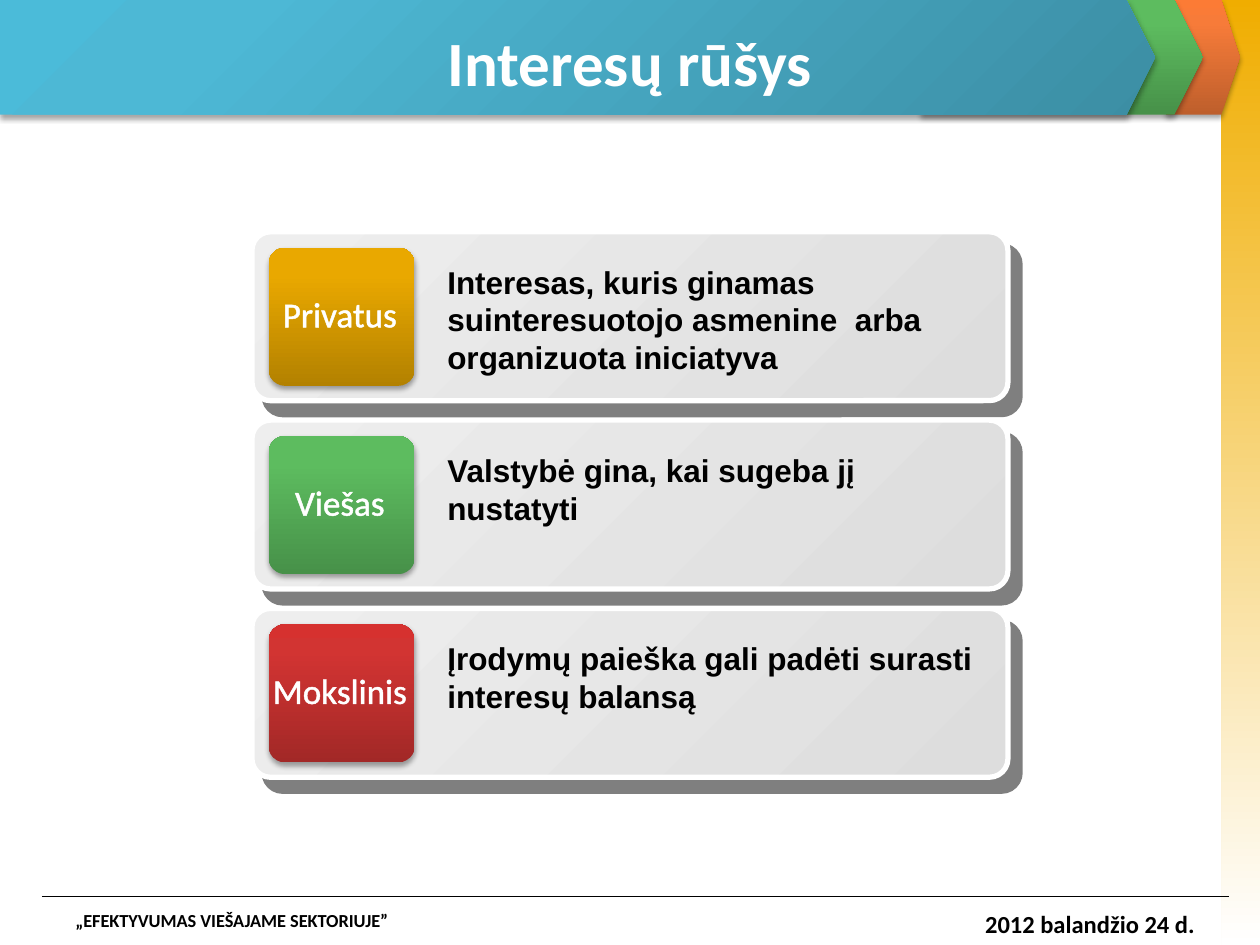
import pptx
import pptx.dml.color
import pptx.enum.shapes
import pptx.enum.text
import pptx.oxml
import pptx.oxml.ns
import pptx.util

Pt = pptx.util.Pt
SHAPES = pptx.enum.shapes.MSO_SHAPE
ALIGN = pptx.enum.text.PP_ALIGN
ANCHOR = pptx.enum.text.MSO_ANCHOR
qn = pptx.oxml.ns.qn
NAMESPACE = pptx.oxml.ns.nsdecls("a")

UPWARD = '<a:lin ang="16200000" scaled="0"/>'
DOWNWARD = '<a:lin ang="5400000" scaled="0"/>'
DIAGONAL = '<a:lin ang="2700000" scaled="0"/>'
FROM_CORNER = '<a:path path="circle"><a:fillToRect l="100000" t="100000"/></a:path>'

# Gradient stops: (percent, colour)
ORANGE = [(0, "BE5F2C"), (80, "F77B39"), (100, "FC7B35")]
GREEN = [(0, "479149"), (80, "5DBC5F"), (100, "5BBF5E")]
BLUE = [(0, "3C8EA4"), (80, "4DB8D5"), (100, "4BBBD9")]
RED = [(0, "A22827"), (80, "D23432"), (100, "D6312F")]
GOLD = [(0, "B38100"), (80, "E9A800"), (100, "EAA800")]
GREY = [(0, "EEEEEE"), (100, "DDDDDD")]
STRIP = [(0, "F0AD00"), (100, "FFFFFF")]

# Shadows: opacity percent, blur, distance, angle
SOFT = (35, 3.1, 1.8, 90)
HARD = (50, 0, 10.6, 49)

CARDS = [
    ("Privatus", GOLD, "Interesas, kuris ginamas suinteresuotojo asmenine  arba organizuota iniciatyva"),
    ("Viešas", GREEN, "Valstybė gina, kai sugeba jį nustatyti"),
    ("Mokslinis", RED, "Įrodymų paieška gali padėti surasti interesų balansą"),
]


def color(value):
    return pptx.dml.color.RGBColor.from_string(value)


def add_gradient_shape(slide, kind, box, stops, direction, shadow=None, corner=None, outline=None):
    shape = slide.shapes.add_shape(kind, *map(Pt, box))
    shape.shadow.inherit = False
    if corner is not None:
        shape.adjustments[0] = corner
    if outline:
        shape.line.color.rgb = color(outline)
        shape.line.width = Pt(3)
    else:
        shape.line.fill.background()
    properties = shape._element.spPr
    stop_xml = "".join(
        f'<a:gs pos="{percent * 1000}"><a:srgbClr val="{value}"/></a:gs>' for percent, value in stops
    )
    properties.find(qn("a:prstGeom")).addnext(pptx.oxml.parse_xml(
        f'<a:gradFill {NAMESPACE} rotWithShape="1"><a:gsLst>{stop_xml}</a:gsLst>{direction}</a:gradFill>'
    ))
    if shadow:
        opacity, blur, distance, angle = shadow
        properties.find(qn("a:effectLst")).append(pptx.oxml.parse_xml(
            f'<a:outerShdw {NAMESPACE} blurRad="{Pt(blur)}" dist="{Pt(distance)}" '
            f'dir="{angle * 60000}" algn="tl" rotWithShape="0"><a:srgbClr val="000000">'
            f'<a:alpha val="{opacity * 1000}"/></a:srgbClr></a:outerShdw>'
        ))
    return shape


def add_text(slide, box, text, size, value="000000", font="Calibri", bold=True,
             align=ALIGN.LEFT, anchor=ANCHOR.TOP, wrap=True):
    frame = slide.shapes.add_textbox(*map(Pt, box)).text_frame
    frame.word_wrap = wrap
    frame.vertical_anchor = anchor
    paragraph = frame.paragraphs[0]
    paragraph.alignment = align
    run = paragraph.add_run()
    run.text = text
    run.font.name = font
    run.font.size = Pt(size)
    run.font.bold = bold
    run.font.color.rgb = color(value)
    return run


def add_text_outline(run, value, width):
    run.font._element.insert(0, pptx.oxml.parse_xml(
        f'<a:ln {NAMESPACE} w="{Pt(width)}"><a:solidFill><a:srgbClr val="{value}"/></a:solidFill></a:ln>'
    ))


def add_header(slide, left, top, width, height):
    # Layered arrows, the rearmost reaching furthest right
    arrows = [(666, 42.5, ORANGE, UPWARD), (526.5, 161, GREEN, UPWARD), (0, 660, BLUE, FROM_CORNER)]
    for offset, length, stops, direction in arrows:
        add_gradient_shape(slide, SHAPES.PENTAGON, (left + offset, top, length, height),
                           stops, direction, SOFT, 0.25)
    add_text(slide, (left + 36, top + 10, width - 72, 50), "Interesų rūšys", 36, "FFFFFF",
             align=ALIGN.CENTER, anchor=ANCHOR.MIDDLE)


def add_footer(slide, left, top, width, height):
    rule = slide.shapes.add_connector(pptx.enum.shapes.MSO_CONNECTOR.STRAIGHT,
                                      Pt(left), Pt(top), Pt(left + width), Pt(top))
    rule.line.color.rgb = color("000000")
    rule.line.width = Pt(0.75)
    rule._element.spPr.append(pptx.oxml.parse_xml(f"<a:effectLst {NAMESPACE}/>"))
    text_top, text_height = top + 3.6, height - 3.6
    add_text(slide, (left + 12, text_top, 432, text_height), "„EFEKTYVUMAS VIEŠAJAME SEKTORIUJE”", 10.5)
    add_text(slide, (left + width - 172, text_top, 160, text_height), "2012 balandžio 24 d.", 14,
             align=ALIGN.RIGHT)


def add_card(slide, left, top, width, height, label, stops, body):
    add_gradient_shape(slide, SHAPES.ROUNDED_RECTANGLE, (left, top, width, height),
                       GREY, DIAGONAL, HARD, 0.11, "FFFFFF")
    # Coloured badge, with a label box a little wider than it so the word stays on one line
    badge_left, badge_width = left + 9.5, 83.5
    add_gradient_shape(slide, SHAPES.ROUNDED_RECTANGLE, (badge_left, top + 9, badge_width, 79),
                       stops, UPWARD, SOFT, 0.12)
    run = add_text(slide, (badge_left - 6, top + 31, badge_width + 10, 31.5), label, 20, "FFFFFF",
                   bold=False, align=ALIGN.CENTER, wrap=False)
    add_text_outline(run, "FFFFFF", 1.45)
    # Description
    add_text(slide, (left + 104.5, top + 14, width - 114.5, height - 24), body, 18, font="Arial")


def main():
    presentation = pptx.Presentation()
    presentation.slide_width = Pt(720)
    presentation.slide_height = Pt(540)
    slide = presentation.slides.add_slide(presentation.slide_layouts[6])

    # Side strip
    add_gradient_shape(slide, SHAPES.RECTANGLE, (698, 0, 22, 540), STRIP, DOWNWARD)
    add_header(slide, 0, 0, 720, 65.5)
    add_footer(slide, 24, 512.5, 678, 27.5)
    # Cards are laid from the bottom up, so no shadow covers the card below
    for index, card in reversed(list(enumerate(CARDS))):
        add_card(slide, 144, 132.5 + index * 107.6, 432, 96.5, *card)

    presentation.save("out.pptx")


if __name__ == "__main__":
    main()
